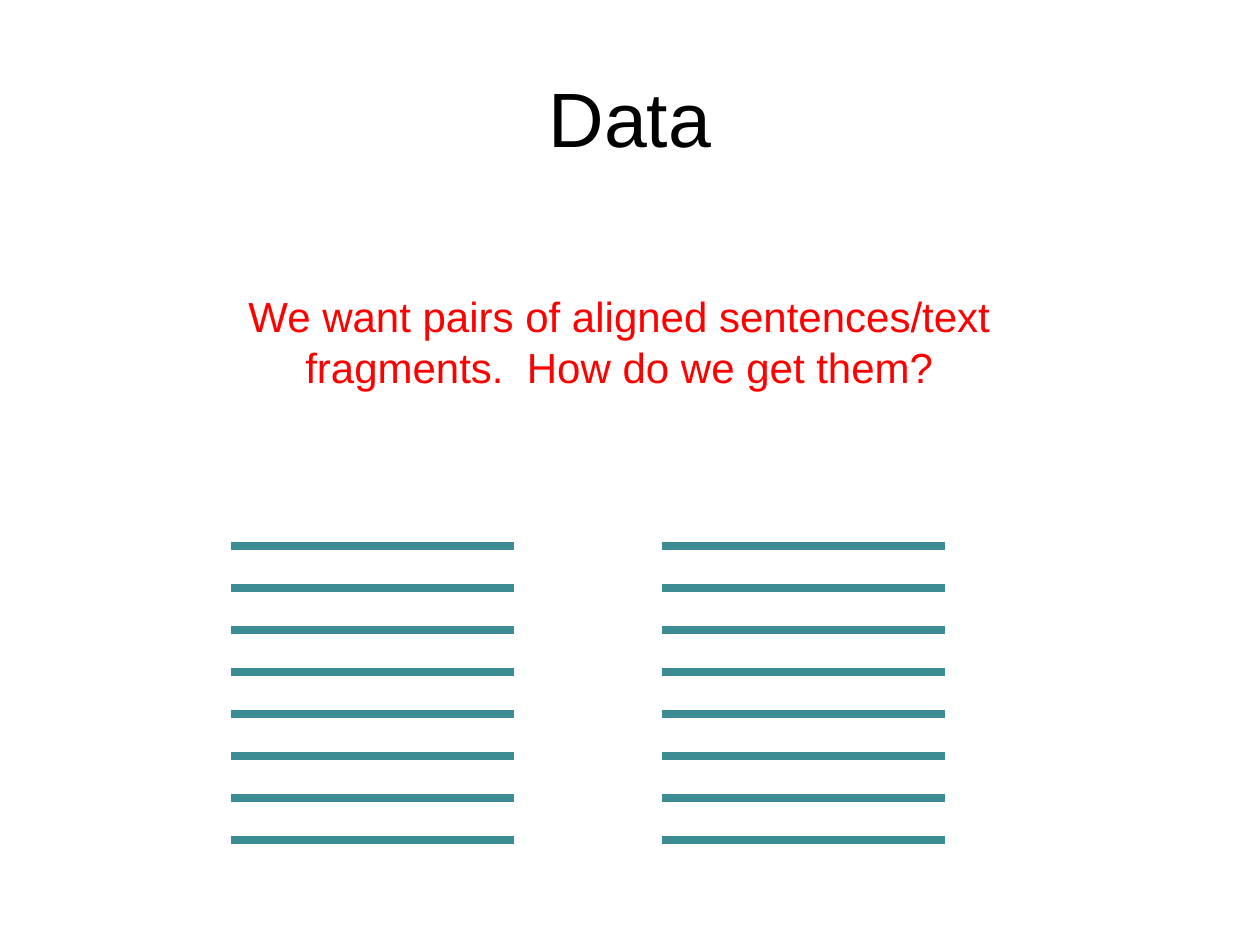
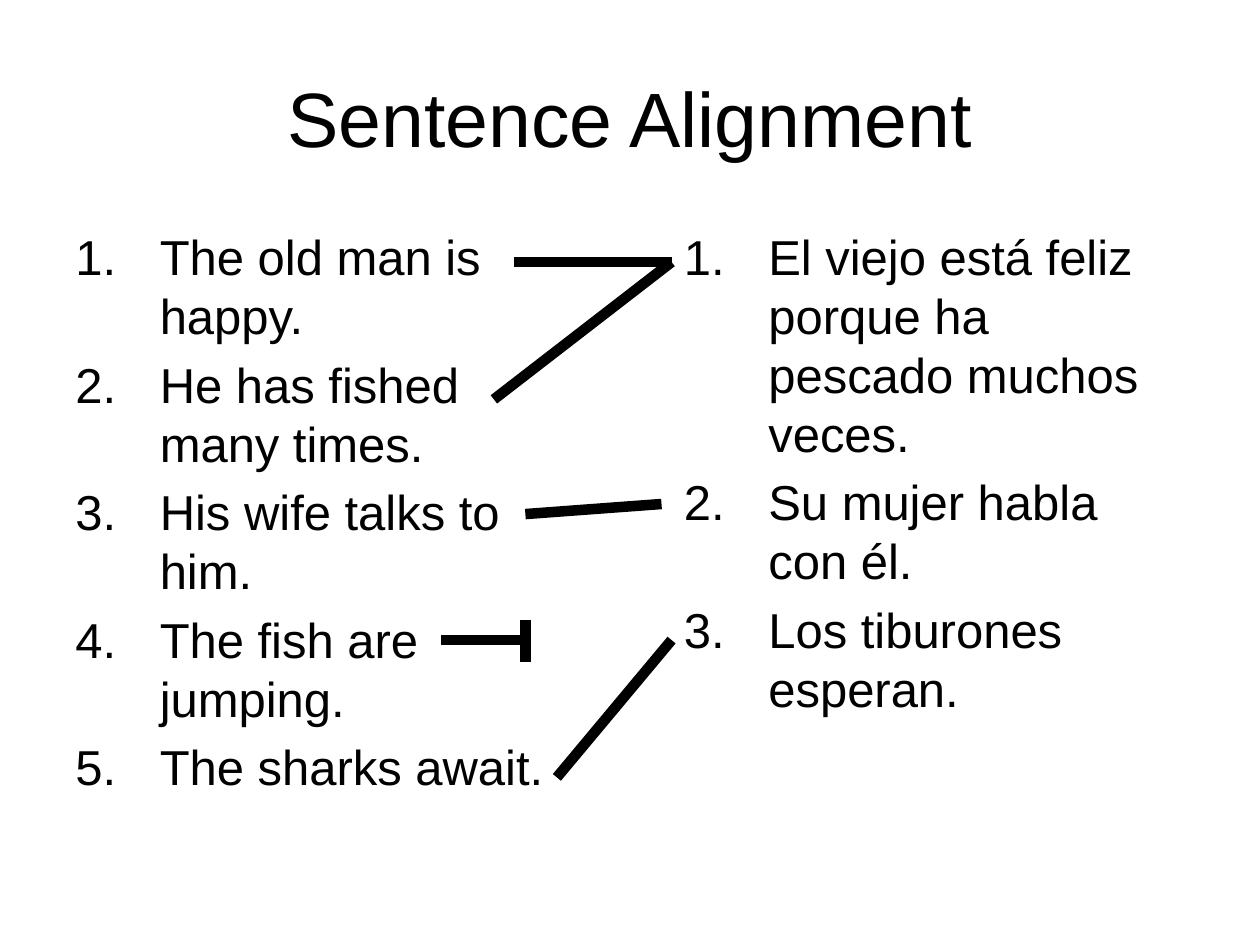
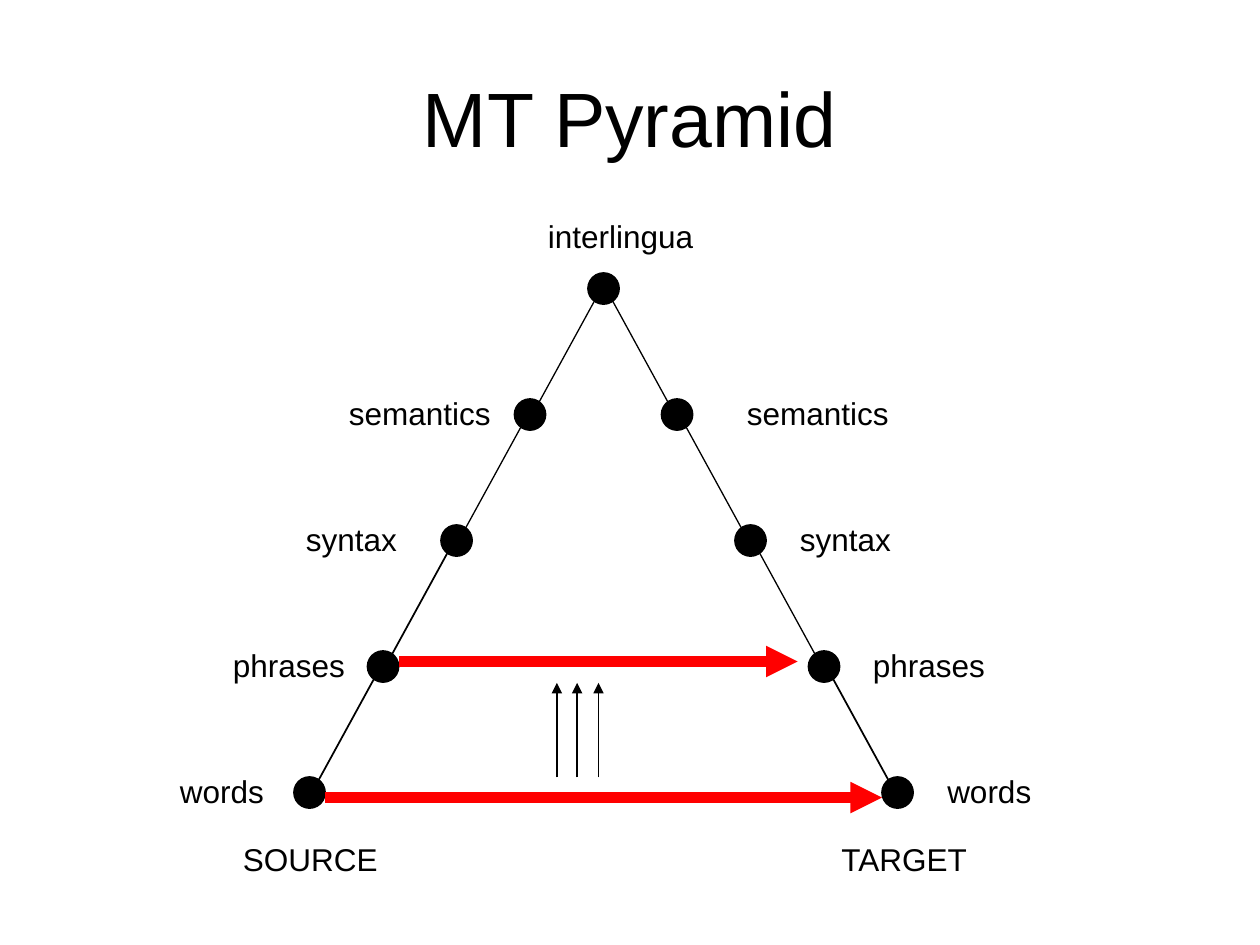
from lxml.etree import SubElement
from pptx import Presentation
from pptx.dml.color import RGBColor
from pptx.enum.shapes import MSO_CONNECTOR, MSO_SHAPE
from pptx.enum.text import MSO_ANCHOR, MSO_AUTO_SIZE, PP_ALIGN
from pptx.oxml.ns import qn
from pptx.util import Inches, Pt

COLOURS = {"ink": "000000", "accent": "FF0000", "sentence": "3C8C93"}
FONT = "Arial"
TITLE_ONLY = 5
DOT_SIZE = 0.25
APEX = (4.79, 2.29)
LEVEL_STEP = (7 / 12, 1)
EDGE_INSET = 0.04


def colour(name):
    """Return the named colour."""
    return RGBColor.from_string(COLOURS[name])


def add_span(para, text, size, ink="ink"):
    """Add one formatted run to a paragraph."""
    span = para.add_run()
    span.text = text
    span.font.name = FONT
    span.font.size = Pt(size)
    span.font.color.rgb = colour(ink)


def add_page(deck, title):
    """Add a slide with the shared title style."""
    page = deck.slides.add_slide(deck.slide_layouts[TITLE_ONLY])
    box = page.shapes.title
    box.left, box.top = Inches(0.5), Inches(0.3)
    box.width, box.height = Inches(9), Inches(1.25)
    frame = box.text_frame
    frame.auto_size = MSO_AUTO_SIZE.NONE
    frame.vertical_anchor = MSO_ANCHOR.MIDDLE
    para = frame.paragraphs[0]
    para.alignment = PP_ALIGN.CENTER
    add_span(para, title, 44)
    return page


def add_box(page, left, top, width, height, wrap=True, grow=True):
    """Add an empty text box and return its text frame."""
    box = page.shapes.add_textbox(
        Inches(left), Inches(top), Inches(width), Inches(height)
    )
    frame = box.text_frame
    frame.word_wrap = wrap
    frame.auto_size = MSO_AUTO_SIZE.SHAPE_TO_FIT_TEXT if grow else MSO_AUTO_SIZE.NONE
    return frame


def add_label(page, text, left, top, width):
    """Add a short one-line label."""
    frame = add_box(page, left, top, width, 0.4, wrap=False)
    add_span(frame.paragraphs[0], text, 18)


def add_numbered_list(page, left, sentences):
    """Add a column of automatically numbered sentences."""
    frame = add_box(page, left, 1.75, 4, 4.95, grow=False)
    for index, sentence in enumerate(sentences):
        para = frame.add_paragraph() if index else frame.paragraphs[0]
        para.space_before = Pt(5.6)
        properties = para._p.get_or_add_pPr()
        properties.set("marL", str(Inches(0.67)))
        properties.set("indent", str(Inches(-0.67)))
        SubElement(properties, qn("a:buFont"), typeface=FONT)
        SubElement(properties, qn("a:buAutoNum"), type="arabicPeriod")
        add_span(para, sentence, 28)


def add_line(page, start, end, width, ink="ink", arrow=False):
    """Add a straight line, with an arrowhead at its end if asked."""
    line = page.shapes.add_connector(
        MSO_CONNECTOR.STRAIGHT, *(Inches(value) for value in (*start, *end))
    )
    line.line.color.rgb = colour(ink)
    line.line.width = Pt(width)
    if arrow:
        SubElement(line.line._get_or_add_ln(), qn("a:tailEnd"), type="triangle")
    SubElement(line._element.spPr, qn("a:effectLst"))


def add_dot(page, centre):
    """Add a pyramid node around its centre."""
    left, top = (Inches(value - DOT_SIZE / 2) for value in centre)
    dot = page.shapes.add_shape(
        MSO_SHAPE.OVAL, left, top, Inches(DOT_SIZE), Inches(DOT_SIZE)
    )
    dot.shadow.inherit = False
    dot.fill.solid()
    dot.fill.fore_color.rgb = colour("ink")
    dot.line.color.rgb = colour("ink")
    dot.line.width = Pt(0.75)


def node_centre(side, level):
    """Return a node's centre; side is -1 for source and 1 for target."""
    return APEX[0] + side * level * LEVEL_STEP[0], APEX[1] + level * LEVEL_STEP[1]


def add_pyramid_side(page, side, edge_widths):
    """Add the edges and nodes on one side below the apex."""
    for level, width in enumerate(edge_widths, start=1):
        x, y = node_centre(side, level)
        upper_x, upper_y = node_centre(side, level - 1)
        inset = side * EDGE_INSET
        add_line(
            page,
            (x - inset, y - EDGE_INSET),
            (upper_x + inset, upper_y + EDGE_INSET),
            width,
        )
        add_dot(page, (x, y))


def build_data(deck):
    """Build the slide on the wanted data."""
    page = add_page(deck, "Data")
    para = add_box(page, 1.25, 2.26, 7.33, 0.91).paragraphs[0]
    para.alignment = PP_ALIGN.CENTER
    question = "We want pairs of aligned sentences/text fragments.  How do we get them?"
    add_span(para, question, 24, "accent")
    for row in range(8):
        y = (13 + row) / 3
        for left in (1.83, 5.25):
            add_line(page, (left, y), (left + 2.25, y), 4.5, "sentence")


def build_alignment(deck):
    """Build the slide that links English and Spanish sentences."""
    page = add_page(deck, "Sentence Alignment")
    add_numbered_list(page, 0.5, (
        "The old man is happy.",
        "He has fished many times.",
        "His wife talks to him.",
        "The fish are jumping.",
        "The sharks await.",
    ))
    add_numbered_list(page, 5.33, (
        "El viejo está feliz porque ha pescado muchos veces.",
        "Su mujer habla con él.",
        "Los tiburones esperan.",
    ))
    links = (
        ((4.08, 2.08), (5.33, 2.08)),
        ((5.33, 2.08), (3.92, 3.17)),
        ((4.17, 4.08), (5.25, 4)),
        ((4.42, 6.17), (5.33, 5.08)),
        ((3.5, 5.08), (4.17, 5.08)),
        ((4.17, 4.92), (4.17, 5.25)),
    )
    for start, end in links:
        add_line(page, start, end, 6)


def build_pyramid(deck):
    """Build the translation pyramid slide."""
    page = add_page(deck, "MT Pyramid")
    add_pyramid_side(page, -1, (0.75, 0.75, 1, 1))
    add_pyramid_side(page, 1, (0.75, 0.75, 0.75, 1))
    add_dot(page, APEX)

    add_label(page, "interlingua", 4.25, 1.67, 1.4)
    levels = (
        ("semantics", 1.33, 2.67, 5.83),
        ("syntax", 0.92, 2.33, 6.25),
        ("phrases", 1.09, 1.75, 6.83),
        ("words", 0.87, 1.33, 7.42),
    )
    for row, (name, width, *lefts) in enumerate(levels):
        for left in lefts:
            add_label(page, name, left, 3.08 + row, width)
    add_label(page, "SOURCE", 1.83, 6.62, 1.27)
    add_label(page, "TARGET", 6.58, 6.62, 1.22)

    add_line(page, (2.58, 6.33), (7, 6.33), 6, "accent", arrow=True)
    add_line(page, (3.17, 5.25), (6.33, 5.25), 6, "accent", arrow=True)
    for x in (4.42, 4.58, 4.75):
        add_line(page, (x, 6.17), (x, 5.42), 0.75, arrow=True)


def main():
    """Build and save the deck."""
    deck = Presentation()
    deck.slide_width, deck.slide_height = Inches(10), Inches(7.5)
    build_data(deck)
    build_alignment(deck)
    build_pyramid(deck)
    deck.save("out.pptx")


if __name__ == "__main__":
    main()
